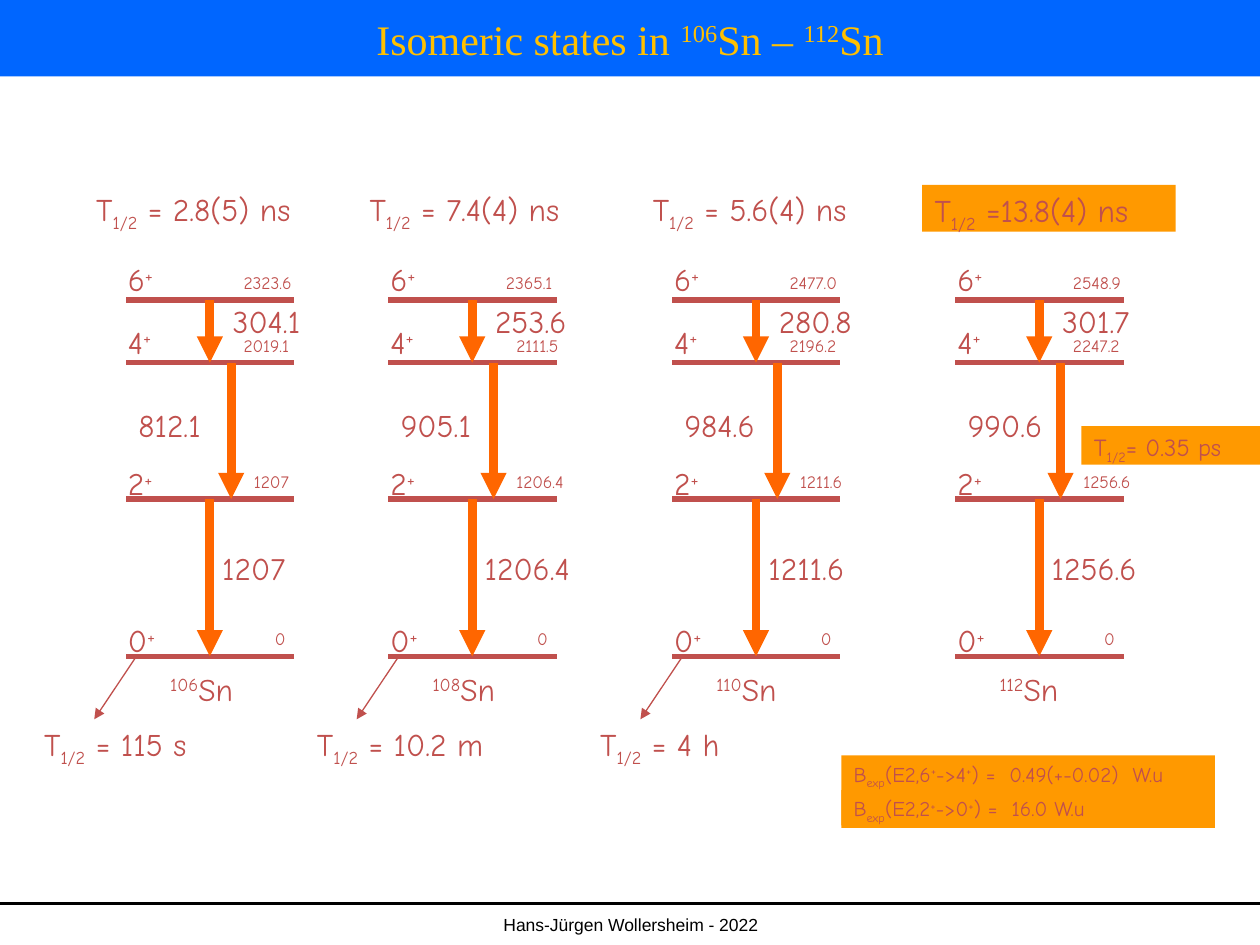
"""Build a slide of isomeric level schemes in four tin isotopes."""
from lxml import etree
from pptx import Presentation
from pptx.dml.color import RGBColor
from pptx.enum.shapes import MSO_CONNECTOR, MSO_SHAPE
from pptx.enum.text import MSO_ANCHOR, MSO_AUTO_SIZE, PP_ALIGN
from pptx.oxml.ns import qn
from pptx.util import Cm, Pt

LINE = MSO_CONNECTOR.STRAIGHT
RECT = MSO_SHAPE.RECTANGLE
TOP, MIDDLE = MSO_ANCHOR.TOP, MSO_ANCHOR.MIDDLE
LEFT, CENTER = PP_ALIGN.LEFT, PP_ALIGN.CENTER
NONE = MSO_AUTO_SIZE.NONE
BASE = {"^": "30000", "_": "-25000"}
RED, ORANGE, GOLD = "C0504D", "FF6600", "FF9900"
color = RGBColor.from_string


def write(shape, text, size, font="Comic Neue", ink=RED, align=LEFT, anchor=TOP, lines=0.9):
    """Fill a shape with text; parts split by | are raised by ^ and lowered by _."""
    frame = shape.text_frame
    frame.word_wrap = True
    frame.auto_size = NONE
    frame.vertical_anchor = anchor
    para = frame.paragraphs[0]
    para.alignment = align
    para.line_spacing = lines
    for part in text.split("|"):
        run = para.add_run()
        run.text = part.lstrip("^_")
        run.font.size = Pt(size)
        run.font.name = font
        run.font.color.rgb = color(ink)
        if part[0] in BASE:
            run.font._element.set("baseline", BASE[part[0]])


def link(x1, y1, x2, y2, ink, width, arrow=False):
    """Draw a straight line, with an arrowhead at its end if asked."""
    line = slide.shapes.add_connector(LINE, Cm(x1), Cm(y1), Cm(x2), Cm(y2))
    line.line.color.rgb = color(ink)
    line.line.width = Pt(width)
    if arrow:
        etree.SubElement(line.line._get_or_add_ln(), qn("a:tailEnd"), type="triangle")
    etree.SubElement(line._element.spPr, qn("a:effectLst"))


deck = Presentation()
deck.slide_width, deck.slide_height = Cm(25.4), Cm(19.05)
slide = deck.slides.add_slide(deck.slide_layouts[5])
shapes = slide.shapes

title = shapes.title
title.left, title.top, title.width, title.height = Cm(0), Cm(0), Cm(25.4), Cm(1.54)
title.fill.solid()
title.fill.fore_color.rgb = color("0066FF")
write(title, "Isomeric states in |^106|Sn – |^112|Sn", 24, "Times New Roman",
      "FFC000", CENTER, MIDDLE, 1)

link(0, 18.21, 25.4, 18.21, "000000", 1.5)
foot = shapes.add_textbox(Cm(0.03), Cm(18.31), Cm(25.37), Cm(0.74))
write(foot, "Hans-Jürgen Wollersheim - 2022", 10, "Arial", "000000", CENTER, lines=1)

levels = [6.05, 7.31, 10.06, 13.23]
spins = [("6", 0.84), ("4", 0.84), ("2", 0.74), ("0", 0.74)]
drops = [1.69, 2.12, 1.69]
marks = [(1.9, 6.05), (0, 8.15), (1.69, 11.02)]
schemes = [
    (2.54, "106", ["2323.6", "2019.1", "1207", "0"], ["304.1", "812.1", "1207"], 2.12),
    (7.83, "108", ["2365.1", "2111.5", "1206.4", "0"], ["253.6", "905.1", "1206.4"], 2.33),
    (13.55, "110", ["2477.0", "2196.2", "1211.6", "0"], ["280.8", "984.6", "1211.6"], 2.12),
    (19.26, "112", ["2548.9", "2247.2", "1256.6", "0"], ["301.7", "990.6", "1256.6"], 2.12),
]
labels = []
for x, mass, states, gammas, shift in schemes:
    for y in levels:
        link(x, y, x + 3.39, y, RED, 3)
    for drop, start, end in zip(drops, levels, levels[1:]):
        link(x + drop, start, x + drop, end, ORANGE, 5, True)
    labels.append((x + 0.64, 13.46, 2.12, 0.94, f"^{mass}|Sn", 18))
    for y, (spin, rise) in zip(levels, spins):
        labels.append((x - 0.21, y - rise, 1.48, 0.94, f"{spin}|^+", 18))
    for (step, y), gamma in zip(marks, gammas):
        labels.append((x + step, y, 2.54, 0.94, gamma, 18))
    for y, state, step in zip(levels, states, [2.12, shift, 2.33, 2.75]):
        labels.append((x + step, y - 0.64, 2.12 if y < 10 else 1.7, 0.64, state, 10))

lives = [
    (1.69, 0.64, "2.8(5) ns", "115 s"),
    (7.2, 6.14, "7.4(4) ns", "10.2 m"),
    (12.91, 11.85, "5.6(4) ns", "4 h"),
]
for (high, low, isomer, ground), scheme in zip(lives, schemes):
    x = scheme[0]
    labels.append((high, 3.72, 5.08, 0.94, f"T|_1/2| = {isomer}", 18))
    labels.append((low, 14.5, 5.08, 0.94, f"T|_1/2| = {ground}", 18))
    link(x + 0.21, 13.23, x - 0.64, 14.5, RED, 0.75, True)

for x, y, wide, tall, text, size in labels:
    write(shapes.add_textbox(Cm(x), Cm(y), Cm(wide), Cm(tall)), text, size)

notes = [
    (18.59, 3.73, 5.11, 0.94, "T|_1/2| =13.8(4) ns", 18),
    (21.8, 8.59, 3.6, 0.78, "T|_1/2|= 0.35 ps", 14),
    (16.96, 15.23, 7.53, 1.46, "B|_exp|(E2,6|^+|->4|^+|) =  0.49(+-0.02)  W.u", 12),
    (16.96, 15.93, 7.53, 0.71, "B|_exp|(E2,2|^+|->0|^+|) =  16.0 W.u", 12),
]
for x, y, wide, tall, text, size in notes:
    note = shapes.add_shape(RECT, Cm(x), Cm(y), Cm(wide), Cm(tall))
    note.shadow.inherit = False
    note.fill.solid()
    note.fill.fore_color.rgb = color(GOLD)
    note.line.fill.background()
    write(note, text, size)

deck.save("out.pptx")
